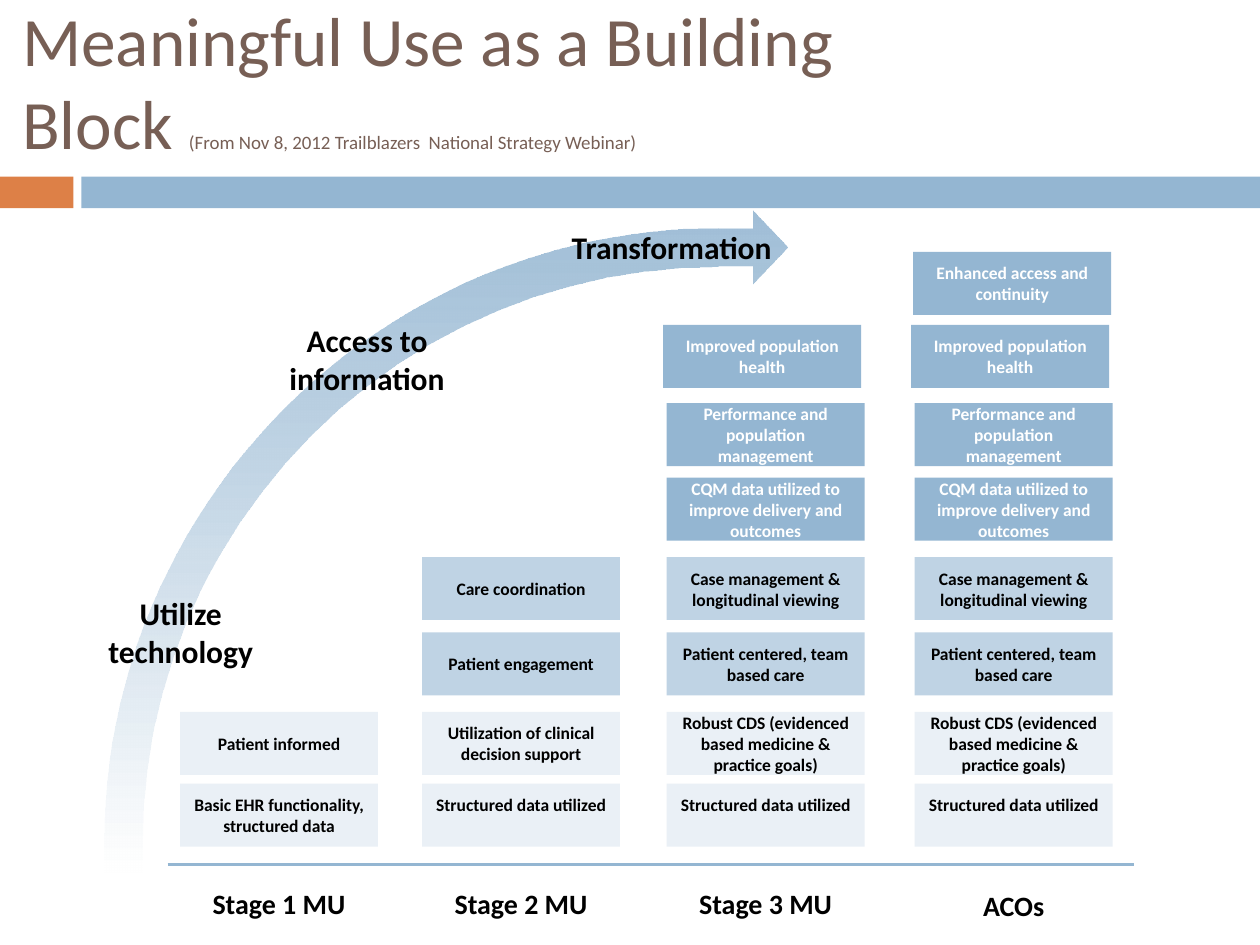
from dataclasses import dataclass

from lxml import etree
from pptx import Presentation
from pptx.dml.color import RGBColor
from pptx.enum.shapes import MSO_CONNECTOR, MSO_SHAPE
from pptx.enum.text import MSO_ANCHOR, PP_ALIGN
from pptx.oxml.ns import qn
from pptx.util import Cm, Pt

RECT, ARROW = MSO_SHAPE.RECTANGLE, MSO_SHAPE.BENT_ARROW
LINE = MSO_CONNECTOR.STRAIGHT
LEFT, CENTER = PP_ALIGN.LEFT, PP_ALIGN.CENTER
TOP, MIDDLE = MSO_ANCHOR.TOP, MSO_ANCHOR.MIDDLE


@dataclass(frozen=True)
class Theme:
    font: str = "Calibri"
    blue: str = "94B6D2"
    soft: str = "BFD3E4"
    pale: str = "EAF0F6"
    orange: str = "DD8047"
    brown: str = "775F55"
    black: str = "000000"
    white: str = "FFFFFF"
    title: float = 39.6
    source: float = 10.8
    block: float = 10
    stage: float = 16
    goal: float = 18


@dataclass(frozen=True)
class Box:
    x: float
    y: float
    w: float
    h: float

    def lengths(self) -> tuple:
        return Cm(self.x), Cm(self.y), Cm(self.w), Cm(self.h)


@dataclass(frozen=True)
class Stage:
    name: str
    x: float
    width: float
    top: float
    blocks: tuple[str, ...]


@dataclass(frozen=True)
class Level:
    y: float
    fill: str
    ink: str
    nudge: float = 0


@dataclass(frozen=True)
class Goal:
    text: str
    box: Box


THEME = Theme()
BLOCK_W, BLOCK_H = 3.99, 1.27
LABEL_H = 0.94
DATA = "Structured data utilized"
SHARED = (
    DATA,
    "Robust CDS (evidenced based medicine & practice goals)",
    "Patient centered, team based care",
    "Case management & longitudinal viewing",
    "CQM data utilized to improve delivery and outcomes",
    "Performance and population management",
    "Improved population health",
)
STAGES = (
    Stage("Stage 1 MU", 3.63, 3.61, 17.75,
          ("Basic EHR functionality, structured data", "Patient informed")),
    Stage("Stage 2 MU", 8.51, 4.83, 17.75,
          (DATA, "Utilization of clinical decision support",
           "Patient engagement", "Care coordination")),
    Stage("Stage 3 MU", 13.44, 4.01, 17.75, SHARED),
    Stage("ACOs", 18.44, 6.15, 17.78,
          SHARED + ("Enhanced access and continuity",)),
)
# Levels run from the base line upward.
LEVELS = (
    Level(15.8, THEME.pale, THEME.black),
    Level(14.35, THEME.pale, THEME.black),
    Level(12.75, THEME.soft, THEME.black),
    Level(11.23, THEME.soft, THEME.black),
    Level(9.63, THEME.blue, THEME.white),
    Level(8.13, THEME.blue, THEME.white),
    Level(6.55, THEME.blue, THEME.white, -0.07),
    Level(5.08, THEME.blue, THEME.white, -0.03),
)
GOALS = (
    Goal("Utilize technology", Box(1.42, 11.86, 4.45, 1.8)),
    Goal("Access to information", Box(5.28, 6.35, 4.24, 1.8)),
    Goal("Transformation", Box(11.1, 4.47, 4.88, 1.02)),
)


def rgb(code: str) -> RGBColor:
    return RGBColor.from_string(code)


def write(shape, runs: tuple, align=CENTER, anchor=TOP, bold=True) -> None:
    """Fill a shape with one paragraph of (text, size, colour) runs."""
    frame = shape.text_frame
    frame.word_wrap = True
    frame.vertical_anchor = anchor
    para = frame.paragraphs[0]
    para.alignment = align
    for text, size, ink in runs:
        run = para.add_run()
        run.text = text
        style = {"name": THEME.font, "size": Pt(size), "bold": bold}
        for key, value in style.items():
            setattr(run.font, key, value)
        run.font.color.rgb = rgb(ink)


def add_plain(slide, kind, box: Box):
    shape = slide.shapes.add_shape(kind, *box.lengths())
    shape.shadow.inherit = False
    shape.line.fill.background()
    return shape


def add_rect(slide, box: Box, fill: str):
    shape = add_plain(slide, RECT, box)
    shape.fill.solid()
    shape.fill.fore_color.rgb = rgb(fill)
    return shape


def add_label(slide, box: Box, text: str, size: float) -> None:
    shape = slide.shapes.add_textbox(*box.lengths())
    write(shape, ((text, size, THEME.black),))


def add_title(slide) -> None:
    shape = slide.shapes.add_textbox(*Box(0.2, 0.2, 17.22, 2.84).lengths())
    note = "(From Nov 8, 2012 Trailblazers  National Strategy Webinar)"
    runs = (("Meaningful Use as a Building Block ", THEME.title, THEME.brown),
            (note, THEME.source, THEME.brown))
    write(shape, runs, LEFT, MIDDLE, False)


def add_stage(slide, stage: Stage) -> None:
    for text, level in zip(stage.blocks, LEVELS):
        box = Box(stage.x + level.nudge, level.y, BLOCK_W, BLOCK_H)
        shape = add_rect(slide, box, level.fill)
        write(shape, ((text, THEME.block, level.ink),), anchor=MIDDLE)
        if text == DATA:
            shape.text_frame.margin_bottom = Cm(0.55)
    left = stage.x + (BLOCK_W - stage.width) / 2
    box = Box(left, stage.top, stage.width, LABEL_H)
    add_label(slide, box, stage.name, THEME.stage)


def add_base(slide) -> None:
    line = slide.shapes.add_connector(
        LINE, Cm(3.38), Cm(17.42), Cm(22.86), Cm(17.42))
    line.line.color.rgb = rgb(THEME.blue)
    line.line.width = Pt(1.75)
    etree.SubElement(line._element.spPr, qn("a:effectLst"))


def add_arrow(slide) -> None:
    """Draw the bent arrow that fades out toward its foot."""
    arrow = add_plain(slide, ARROW, Box(2.11, 4.24, 13.77, 13.34))
    for spot, value in enumerate((0.058, 0.056, 0.053, 0.927)):
        arrow.adjustments[spot] = value
    arrow.fill.gradient()
    arrow.fill.gradient_angle = 270
    for stop, ink, place in zip(arrow.fill.gradient_stops,
                                (THEME.blue, THEME.white), (0, 1)):
        stop.color.rgb = rgb(ink)
        stop.position = place
    tint = next(arrow._element.spPr.iter(qn("a:srgbClr")))
    etree.SubElement(tint, qn("a:alpha"), val="88000")


def main() -> None:
    deck = Presentation()
    deck.slide_width, deck.slide_height = Cm(25.4), Cm(19.05)
    slide = deck.slides.add_slide(deck.slide_layouts[6])
    add_rect(slide, Box(0, 3.56, 1.48, 0.64), THEME.orange)
    add_rect(slide, Box(1.64, 3.56, 23.76, 0.64), THEME.blue)
    add_title(slide)
    add_base(slide)
    add_arrow(slide)
    for stage in STAGES:
        add_stage(slide, stage)
    for goal in GOALS:
        add_label(slide, goal.box, goal.text, THEME.goal)
    deck.save("out.pptx")


if __name__ == "__main__":
    main()
